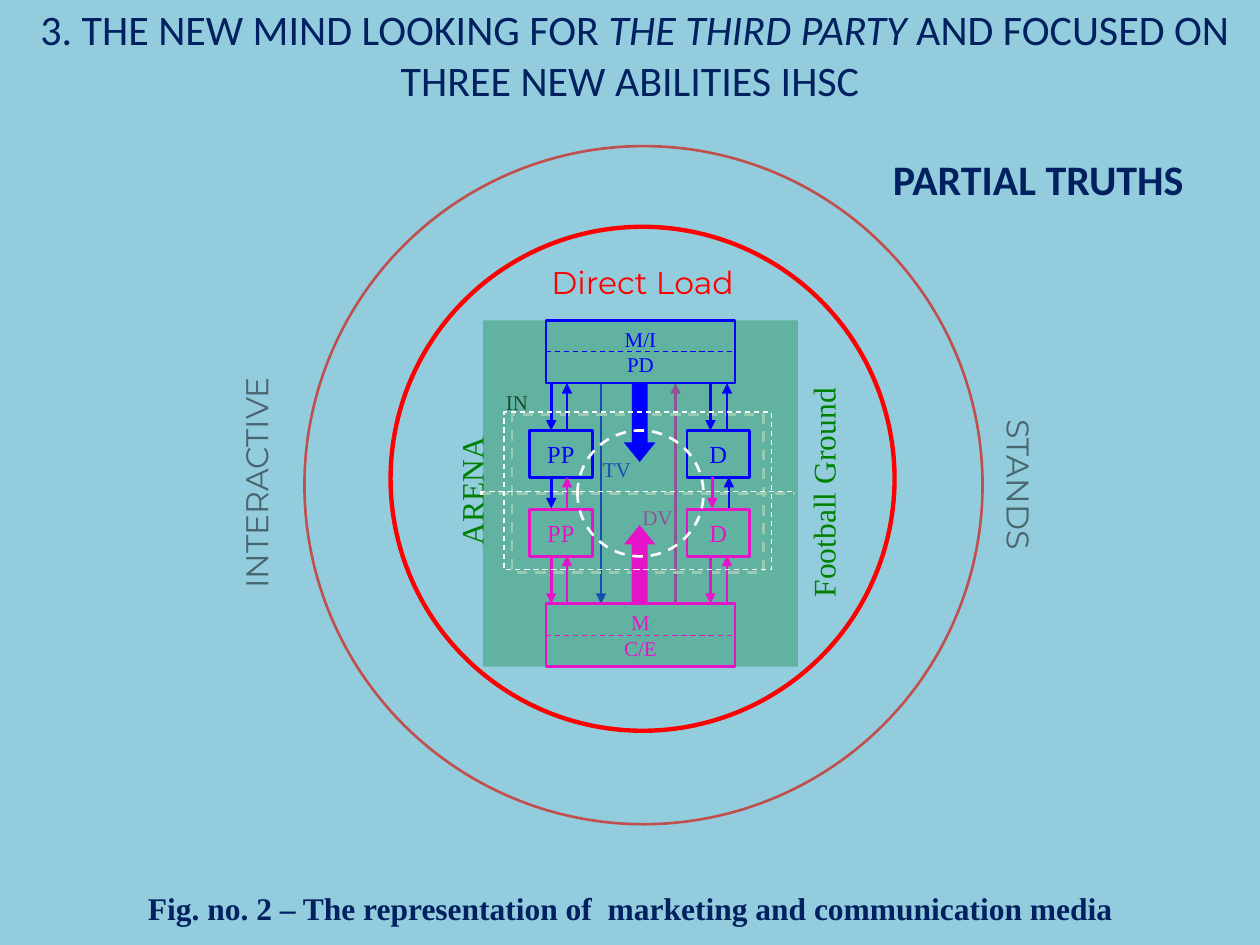
from dataclasses import dataclass

from lxml import etree
from pptx import Presentation
from pptx.dml.color import RGBColor
from pptx.enum.dml import MSO_LINE
from pptx.enum.shapes import MSO_CONNECTOR, MSO_SHAPE
from pptx.enum.text import MSO_ANCHOR, MSO_AUTO_SIZE, PP_ALIGN
from pptx.oxml.ns import qn
from pptx.util import Pt

RECT, OVAL, UP_ARROW = MSO_SHAPE.RECTANGLE, MSO_SHAPE.OVAL, MSO_SHAPE.UP_ARROW
STRAIGHT, DASH = MSO_CONNECTOR.STRAIGHT, MSO_LINE.DASH
LEFT, CENTER = PP_ALIGN.LEFT, PP_ALIGN.CENTER


@dataclass(frozen=True)
class Theme:
    sky: RGBColor = RGBColor.from_string("93CDDD")
    navy: RGBColor = RGBColor.from_string("002060")
    black: RGBColor = RGBColor.from_string("000000")
    white: RGBColor = RGBColor.from_string("FFFFFF")
    red: RGBColor = RGBColor.from_string("FF0000")
    brick: RGBColor = RGBColor.from_string("C0504D")
    green: RGBColor = RGBColor.from_string("008000")
    turf: RGBColor = RGBColor.from_string("339966")
    blue: RGBColor = RGBColor.from_string("0000FF")
    pink: RGBColor = RGBColor.from_string("E614C8")
    sans: str = "Calibri"
    display: str = "Montserrat"
    serif: str = "Times New Roman"
    title: int = 24
    label: int = 18
    box: int = 14
    small: int = 12


T = Theme()

prs = Presentation()
prs.slide_width, prs.slide_height = Pt(720), Pt(540)
s = prs.slides.add_slide(prs.slide_layouts[5])
s.background.fill.solid()
s.background.fill.fore_color.rgb = T.sky


def add_shape(kind, x, y, w, h, line=None, width=1.5, fill=None, dash=False):
    sp = s.shapes.add_shape(kind, Pt(x), Pt(y), Pt(w), Pt(h))
    sp.shadow.inherit = False
    if fill is None:
        sp.fill.background()
    else:
        sp.fill.solid()
        sp.fill.fore_color.rgb = fill
    if line is None:
        sp.line.fill.background()
    else:
        sp.line.color.rgb = line
        sp.line.width = Pt(width)
    if dash:
        sp.line.dash_style = DASH
    return sp


def add_line(x1, y1, x2, y2, color, width=1.5, dash=False):
    """Draw a dashed line, or else a solid one with an arrowhead at its end."""
    cn = s.shapes.add_connector(STRAIGHT, Pt(x1), Pt(y1), Pt(x2), Pt(y2))
    cn.line.color.rgb = color
    cn.line.width = Pt(width)
    if dash:
        cn.line.dash_style = DASH
    else:
        etree.SubElement(cn.line._ln, qn("a:tailEnd"), type="triangle")
    etree.SubElement(cn._element.spPr, qn("a:effectLst"))
    return cn


# Title
title = s.shapes.title
title.left, title.top, title.width, title.height = Pt(0), Pt(-1.5), Pt(720), Pt(65.5)
tf = title.text_frame
tf.auto_size = MSO_AUTO_SIZE.NONE
tf.vertical_anchor = MSO_ANCHOR.TOP
p = tf.paragraphs[0]
p.alignment = CENTER
p.font.name, p.font.size, p.font.color.rgb = T.sans, Pt(T.title), T.navy
for text, italic in (
    (" 3. THE NEW MIND LOOKING FOR ", False),
    ("THE THIRD PARTY ", True),
    ("AND FOCUSED ON THREE NEW ABILITIES IHSC", False),
):
    r = p.add_run()
    r.text, r.font.italic = text, italic

# Rings of the stadium
add_shape(OVAL, 174, 83.5, 387.5, 387.5, T.brick)
add_shape(OVAL, 223.2, 129.6, 288, 288, T.red, 2.5)

# Labels: text, x, y, w, h, rotation, font, size, colour, bold, wrap, alignment
translucent = []
for text, x, y, w, h, turn, font, size, color, bold, wrap, align in (
    ("INTERACTIVE", 34.5, 250.5, 245.5, 51, 270, T.display, T.label, T.black, False, False, CENTER),
    ("STANDS", 466.5, 241, 188.5, 72, 90, T.display, T.label, T.black, False, False, CENTER),
    ("Direct Load", 291, 147, 152.5, 54, 0, T.display, T.label, T.red, False, False, CENTER),
    ("ARENA", 201, 273, 123, 15, 270, T.serif, T.label, T.green, False, False, CENTER),
    ("Football Ground", 373.5, 274, 180, 15, 270, T.serif, T.label, T.green, False, False, CENTER),
    ("DV", 360, 284.5, 36, 27, 0, T.serif, T.small, T.pink, False, True, LEFT),
    ("TV", 337.5, 257.5, 36, 27, 0, T.serif, T.small, T.blue, False, True, LEFT),
    ("IN", 282, 219, 36, 27, 0, T.serif, T.small, T.black, False, True, LEFT),
    ("Fig. no. 2 – The representation of  marketing and communication media",
     53.5, 504.5, 613.5, 29, 0, T.serif, T.label, T.navy, True, True, CENTER),
    ("PARTIAL TRUTHS", 466.5, 84, 253.5, 36, 0, T.sans, T.title, T.navy, True, True, CENTER),
):
    sp = s.shapes.add_textbox(Pt(x), Pt(y), Pt(w), Pt(h))
    sp.rotation = turn
    sp.text_frame.word_wrap = wrap
    p = sp.text_frame.paragraphs[0]
    p.text, p.alignment = text, align
    p.font.name, p.font.size, p.font.bold = font, Pt(size), bold
    p.font.color.rgb = color
    if font == T.display and color == T.black:
        translucent.append(sp)

# Lines and frame that lie under the football ground
bar_top, bar_bottom, bar_h = 183, 345, 36
upper_edge = bar_top + bar_h
add_line(274.5, 282, 454.5, 282, T.white, dash=True)
add_line(386, bar_bottom, 386, upper_edge, T.pink)
add_line(343.5, upper_edge, 343.5, bar_bottom, T.blue)
add_shape(RECT, 292.5, 237, 144, 90, T.white, dash=True)

# Football ground
translucent.append(add_shape(RECT, 276, bar_top, 180, 198, fill=T.turf))
for sp in translucent:
    for color in sp._element.iter(qn("a:srgbClr")):
        etree.SubElement(color, qn("a:alpha"), val="50000")

# Players and bars of the two teams
bars = []
for color, bar_y, bar_lines, box_y in (
    (T.blue, bar_top, ("M/I", "PD"), 246),
    (T.pink, bar_bottom, ("M", "C/E"), 291),
):
    for x, y, w, h, lines, size in (
        (302.5, box_y, 36, 27, ("PP",), T.box),
        (392.5, box_y, 36, 27, ("D",), T.box),
        (312, bar_y, 108, bar_h, bar_lines, T.small),
    ):
        sp = add_shape(RECT, x, y, w, h, color)
        tf = sp.text_frame
        tf.vertical_anchor = MSO_ANCHOR.MIDDLE
        tf.text = "\n".join(lines)
        for p in tf.paragraphs:
            p.alignment = CENTER
            p.font.name, p.font.size, p.font.color.rgb = T.serif, Pt(size), color
    bars.append((sp, color))

# Pairs of arrows: one down on the left, one up on the right
for top, bottom, down_colors, up_colors, shift in (
    (upper_edge, 246, (T.blue, T.blue), (T.blue, T.blue), 0),
    (272.5, 290.5, (T.blue, T.pink), (T.pink, T.blue), 1),
    (317.5, bar_bottom, (T.pink, T.pink), (T.pink, T.pink), 0),
):
    for down_x, up_x, down, up in zip(
        (315, 406 + shift), (324, 415.5 + shift), down_colors, up_colors
    ):
        add_line(down_x, top, down_x, bottom, down)
        add_line(up_x, bottom, up_x, top, up)

# Block arrows towards the centre circle
for y, turn, color in ((300, 0, T.pink), (upper_edge, 180, T.blue)):
    sp = add_shape(UP_ARROW, 356.5, y, 18, 45, fill=color)
    sp.adjustments[0], sp.adjustments[1] = 0.5, 0.62
    sp.rotation = turn

# Centre circle, frame and halfway line
add_shape(OVAL, 330, 246, 72, 72, T.white, dash=True)
add_shape(RECT, 288, 235.5, 153, 90, T.white, 0.75, dash=True)
add_line(274.5, 281, 454.5, 281, T.white, 0.75, dash=True)

# Dividers of the bars
for bar, color in bars:
    cn = add_line(0, 0, 0, 0, color, 0.75, dash=True)
    cn.begin_connect(bar, 1)
    cn.end_connect(bar, 3)

prs.save("out.pptx")
